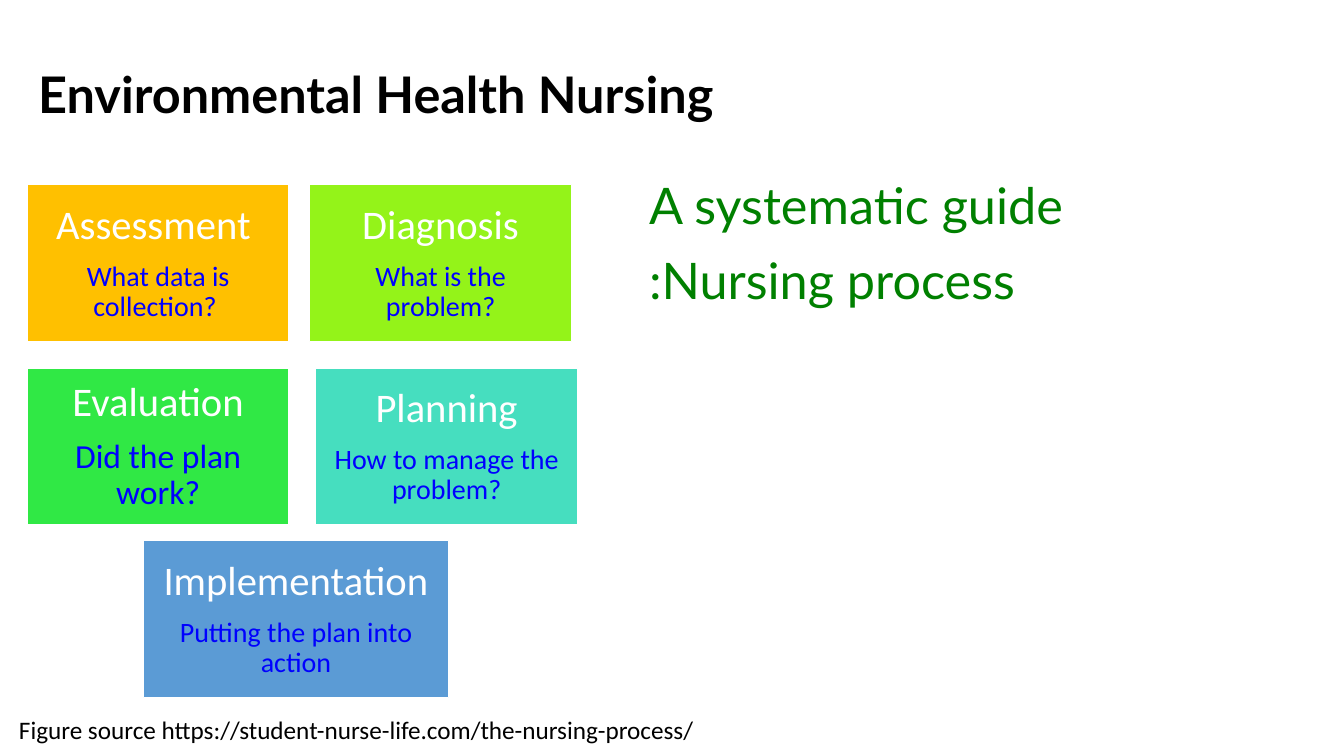
import pptx
import pptx.dml.color
import pptx.enum.shapes
import pptx.enum.text
import pptx.util

Pt = pptx.util.Pt
RGB = pptx.dml.color.RGBColor
PP_ALIGN = pptx.enum.text.PP_ALIGN
ANCHOR = pptx.enum.text.MSO_ANCHOR

BLACK = RGB(0x00, 0x00, 0x00)
WHITE = RGB(0xFF, 0xFF, 0xFF)
GREEN = RGB(0x00, 0x80, 0x00)
BLUE = RGB(0x00, 0x00, 0xFF)
AMBER = RGB(0xFF, 0xC0, 0x00)
LIME = RGB(0x94, 0xF3, 0x19)
EMERALD = RGB(0x30, 0xE8, 0x45)
TURQUOISE = RGB(0x46, 0xDE, 0xBF)
STEEL = RGB(0x5B, 0x9B, 0xD5)

STEP_HEIGHT = 112.3
STEP_INSET = 8.6

# Heading, question, question size, fill, left, top, width
STEPS = [
    ("Assessment ", "What data is collection? ", 20, AMBER, 0, 0, 187.2),
    ("Diagnosis", "What is the problem?", 20, LIME, 201.8, 0, 187.2),
    ("Evaluation", "Did the plan work?", 24, EMERALD, 0, 131, 187.2),
    ("Planning", "How to manage the problem?", 20, TURQUOISE, 206.1, 131, 187.2),
    ("Implementation", "Putting the plan into action", 20, STEEL, 83, 254.3, 218.2),
]


def write(frame, text, size, color, font="Calibri", bold=False,
          align=PP_ALIGN.LEFT, spacing=1.0, before=0):
    """Fill the empty first paragraph of a frame, or append another one."""
    first = frame.paragraphs[0]
    paragraph = first if not first.runs else frame.add_paragraph()
    paragraph.alignment = align
    paragraph.line_spacing = spacing
    paragraph.space_before = Pt(before)
    run = paragraph.add_run()
    run.text = text
    run.font.name = font
    run.font.size = Pt(size)
    run.font.bold = bold
    run.font.color.rgb = color


def add_frame(slide, left, top, width, height, anchor=ANCHOR.TOP):
    box = slide.shapes.add_textbox(Pt(left), Pt(top), Pt(width), Pt(height))
    frame = box.text_frame
    frame.word_wrap = True
    frame.vertical_anchor = anchor
    return frame


def add_title(slide, left, top, width, height):
    title = add_frame(slide, left, top, width, height, ANCHOR.MIDDLE)
    write(title, "Environmental Health Nursing", 36, BLACK, font="Lato",
          bold=True, spacing=0.9)


def add_guide(slide, left, top, width, height):
    guide = add_frame(slide, left, top, width, height)
    write(guide, "A systematic guide", 36, GREEN, font="Lato")
    write(guide, ":Nursing process", 36, GREEN, font="Lato", before=10)


def add_source(slide, left, top, width, height):
    source = add_frame(slide, left, top, width, height)
    write(source, "Figure source https://student-nurse-life.com/the-nursing-process/",
          18, BLACK)


def add_step(slide, heading, question, question_size, fill, left, top, width):
    step = slide.shapes.add_shape(pptx.enum.shapes.MSO_SHAPE.RECTANGLE,
                                  Pt(left), Pt(top), Pt(width), Pt(STEP_HEIGHT))
    step.shadow.inherit = False
    step.fill.solid()
    step.fill.fore_color.rgb = fill
    step.line.color.rgb = WHITE
    step.line.width = Pt(1)
    frame = step.text_frame
    frame.word_wrap = True
    frame.vertical_anchor = ANCHOR.MIDDLE
    frame.margin_left = frame.margin_right = Pt(STEP_INSET)
    frame.margin_top = frame.margin_bottom = Pt(STEP_INSET)
    write(frame, heading, 29, WHITE, align=PP_ALIGN.CENTER, spacing=0.9)
    write(frame, question, question_size, BLUE, align=PP_ALIGN.CENTER,
          spacing=0.9, before=10)


def add_process(slide, left, top):
    for heading, question, size, fill, dx, dy, width in STEPS:
        add_step(slide, heading, question, size, fill, left + dx, top + dy, width)


def main():
    deck = pptx.Presentation()
    deck.slide_width, deck.slide_height = Pt(960), Pt(540)
    slide = deck.slides.add_slide(deck.slide_layouts[6])
    add_title(slide, 20.2, 50.4, 933, 38.2)
    add_guide(slide, 456.5, 121, 396.7, 137.5)
    add_source(slide, 6.5, 506.9, 924.5, 28.8)
    add_process(slide, 19.4, 131.8)
    deck.save("out.pptx")


if __name__ == "__main__":
    main()
